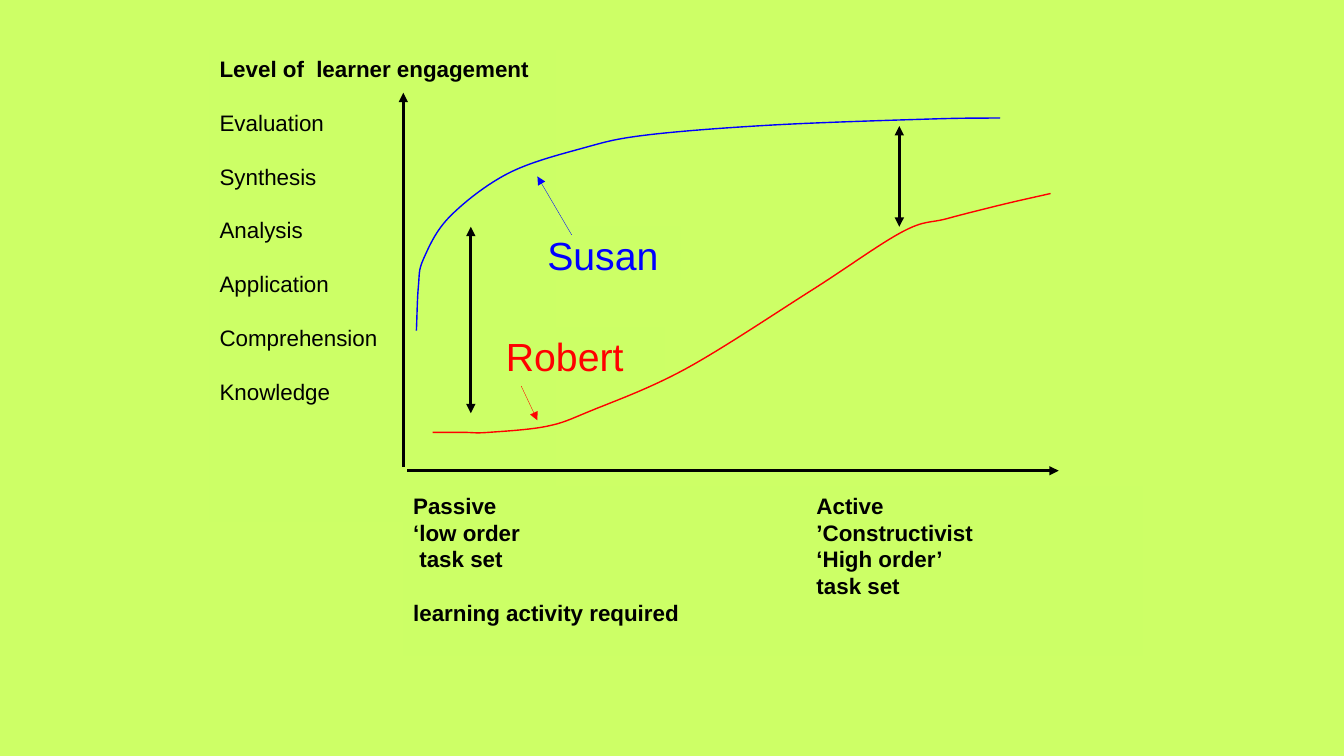
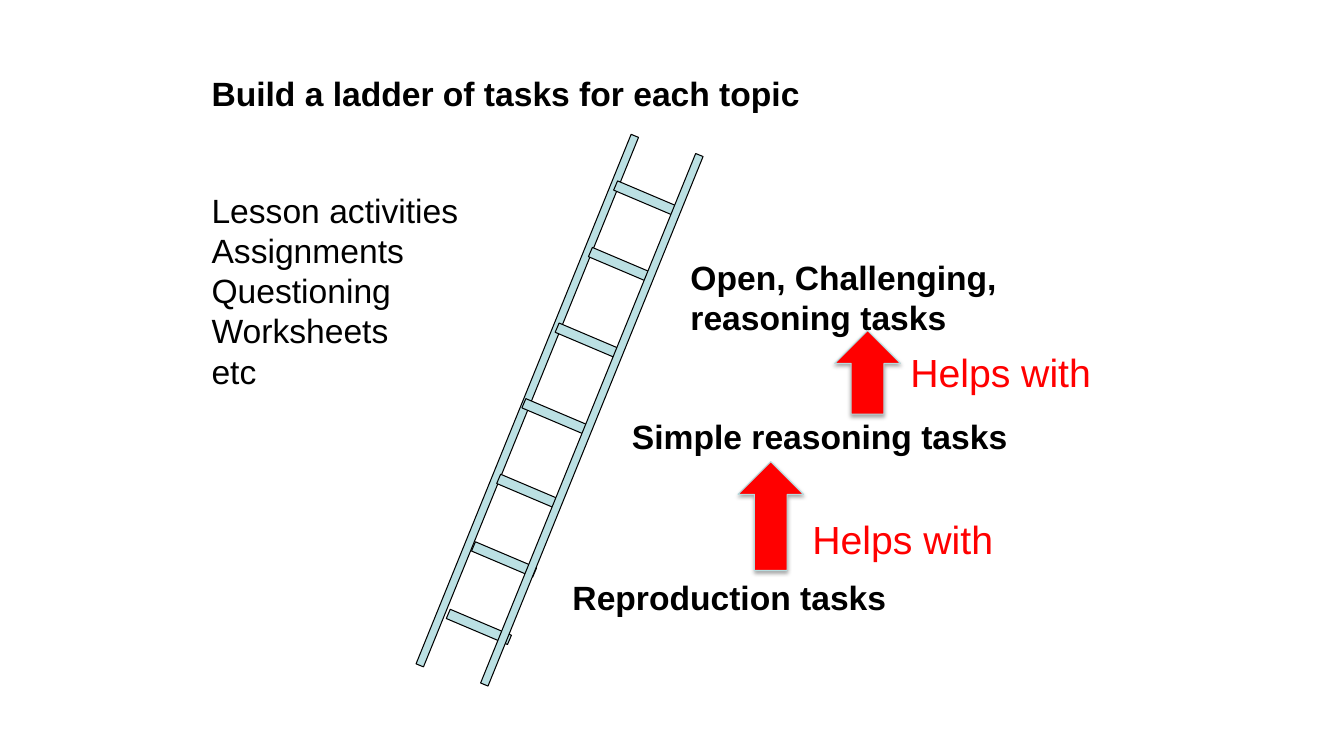
from lxml.etree import SubElement
from pptx import Presentation
from pptx.dml.color import RGBColor
from pptx.enum.shapes import MSO_CONNECTOR, MSO_SHAPE
from pptx.oxml.ns import qn
from pptx.util import Inches, Pt

FONT = "Arial"
BLACK = RGBColor(0x00, 0x00, 0x00)
BLUE = RGBColor(0x00, 0x00, 0xFF)
RED = RGBColor(0xFF, 0x00, 0x00)
LIME = RGBColor(0xCD, 0xFF, 0x66)
LIME_PANEL = RGBColor(0xCC, 0xFF, 0x66)
WHITE = RGBColor(0xFF, 0xFF, 0xFF)
PALE_TEAL = RGBColor(0xBB, 0xE0, 0xE3)
TEAL_EDGE = RGBColor(0xB6, 0xDC, 0xDF)


def add_text(slide, box, lines, size, color=BLACK, bold=False, gap=0, fill=None):
    shape = slide.shapes.add_textbox(*[Inches(value) for value in box])
    if fill is not None:
        shape.fill.solid()
        shape.fill.fore_color.rgb = fill
    text_frame = shape.text_frame
    text_frame.word_wrap = True
    text_frame.text = "\n".join(lines)
    for index, paragraph in enumerate(text_frame.paragraphs):
        paragraph.line_spacing = Pt(size * 1.2)
        paragraph.space_before = Pt(gap if index else 0)
        for run in paragraph.runs:
            run.font.name = FONT
            run.font.size = Pt(size)
            run.font.bold = bold
            run.font.color.rgb = color
    return shape


def add_block(slide, preset, box, fill, edge, rotation=0):
    shape = slide.shapes.add_shape(preset, *[Inches(value) for value in box])
    shape.rotation = rotation
    shape.shadow.inherit = False
    shape.fill.solid()
    shape.fill.fore_color.rgb = fill
    shape.line.color.rgb = edge
    shape.line.width = Pt(0.75)
    return shape


presentation = Presentation()
presentation.slide_width = Inches(13.33)
presentation.slide_height = Inches(7.5)
slides = []
for background in (LIME, WHITE):
    slide = presentation.slides.add_slide(presentation.slide_layouts[6])
    slide.background.fill.solid()
    slide.background.fill.fore_color.rgb = background
    slides.append(slide)
engagement_slide, ladder_slide = slides

levels = ["Level of  learner engagement", "Evaluation", "Synthesis", "Analysis",
          "Application", "Comprehension", "Knowledge"]
level_box = add_text(engagement_slide, (2.08, 0.5, 3.43, 4.67), levels, 16,
                     gap=19.2, fill=LIME_PANEL)
level_box.text_frame.paragraphs[0].runs[0].font.bold = True

activities = ["Passive\tActive", "‘low order\t’Constructivist",
              " task set\t‘High order’", "\ttask set", "learning activity required"]
activity_box = add_text(engagement_slide, (4, 4.83, 7.33, 1.67), activities, 16,
                        bold=True, fill=LIME_PANEL)
for paragraph in activity_box.text_frame.paragraphs:
    tab_list = SubElement(paragraph._p.get_or_add_pPr(), qn("a:tabLst"))
    SubElement(tab_list, qn("a:tab"), pos=str(Inches(4)), algn="l")

add_text(engagement_slide, (5.33, 2.25, 1.42, 0.52), ["Susan"], 28, BLUE, fill=LIME_PANEL)
add_text(engagement_slide, (4.92, 3.25, 1.67, 0.52), ["Robert"], 28, RED, fill=LIME_PANEL)

susan_points = [(4.13, 3.28), (4.15, 2.84), (4.2, 2.57), (4.46, 2.15), (5.04, 1.72),
                (5.78, 1.47), (6.41, 1.34), (7.67, 1.24), (9.25, 1.18), (9.92, 1.17)]
robert_points = [(4.29, 4.29), (4.61, 4.29), (4.84, 4.29), (5.42, 4.23), (5.85, 4.08),
                 (6.8, 3.66), (8.05, 2.88), (8.95, 2.3), (9.39, 2.17), (9.94, 2.03),
                 (10.42, 1.92)]
for points, color in ((susan_points, BLUE), (robert_points, RED)):
    corners = [(Inches(x), Inches(y)) for x, y in points]
    builder = engagement_slide.shapes.build_freeform(*corners[0])
    builder.add_line_segments(corners[1:], close=False)
    curve = builder.convert_to_shape()
    curve.shadow.inherit = False
    curve.fill.background()
    curve.line.color.rgb = color
    curve.line.width = Pt(1)
    local = [(x - curve.left, y - curve.top) for x, y in corners]
    before = tuple(2 * a - b for a, b in zip(local[0], local[1]))
    after = tuple(2 * a - b for a, b in zip(local[-1], local[-2]))
    chain = [before, *local, after]
    segments = list(curve._element.iter(qn("a:lnTo")))
    for segment, p0, p1, p2, p3 in zip(segments, chain, chain[1:], chain[2:], chain[3:]):
        leave = [b + (c - a) / 6 for a, b, c in zip(p0, p1, p2)]
        arrive = [c - (d - b) / 6 for b, c, d in zip(p1, p2, p3)]
        bezier = segment.getparent().makeelement(qn("a:cubicBezTo"))
        for x, y in (leave, arrive, p2):
            SubElement(bezier, qn("a:pt"), x=str(round(x)), y=str(round(y)))
        segment.getparent().replace(segment, bezier)

arrows = [
    ((4, 4.63), (4, 0.92), BLACK, 2.25, ["tailEnd"]),
    ((4.04, 4.67), (10.5, 4.67), BLACK, 2.25, ["tailEnd"]),
    ((4.67, 2.25), (4.67, 4.1), BLACK, 2.25, ["headEnd", "tailEnd"]),
    ((8.92, 1.25), (8.92, 2.25), BLACK, 2.25, ["headEnd", "tailEnd"]),
    ((5.67, 2.33), (5.33, 1.75), BLUE, 0.25, ["tailEnd"]),
    ((5.17, 3.83), (5.33, 4.17), RED, 0.25, ["tailEnd"]),
]
for start, end, color, width, ends in arrows:
    connector = engagement_slide.shapes.add_connector(
        MSO_CONNECTOR.STRAIGHT, *[Inches(value) for value in start + end])
    connector.line.color.rgb = color
    connector.line.width = Pt(width)
    properties = connector._element.spPr
    for name in ends:
        SubElement(properties.find(qn("a:ln")), qn("a:" + name), type="triangle")
    SubElement(properties, qn("a:effectLst"))

add_text(ladder_slide, (2, 0.67, 7.2, 1.31),
         ["Build a ladder of tasks for each topic"], 24, bold=True)

left_rail = (5.19, 1.14, 0.08, 5.67, 22.1)
right_rail = (5.83, 1.33, 0.08, 5.67, 22.1)
rung_corners = [(4.42, 6.17), (4.67, 5.5), (4.92, 4.83), (5.17, 4.08),
                (5.5, 3.33), (5.83, 2.58), (6.08, 1.92)]
rungs = [(left, top, 0.66, 0.1, 23) for left, top in rung_corners]
for *box, rotation in [left_rail, *rungs, right_rail]:
    add_block(ladder_slide, MSO_SHAPE.RECTANGLE, box, PALE_TEAL, BLACK, rotation)

for box, label in [
    ((5.58, 5.67, 4, 0.5), "Reproduction tasks"),
    ((6.17, 4.08, 4.17, 0.5), "Simple reasoning tasks"),
    ((6.75, 2.5, 4, 0.91), "Open, Challenging, reasoning tasks"),
]:
    add_text(ladder_slide, box, [label], 24, bold=True)

add_text(ladder_slide, (2, 1.83, 2.75, 2.12),
         ["Lesson activities", "Assignments", "Questioning", "Worksheets", "etc"], 24)

for arrow_box, label_corner in [
    ((7.32, 4.58, 0.65, 1.08), (7.96, 5.06)),
    ((8.28, 3.28, 0.65, 0.83), (8.93, 3.41)),
]:
    arrow = add_block(ladder_slide, MSO_SHAPE.UP_ARROW, arrow_box, RED, TEAL_EDGE)
    effects = arrow._element.spPr.find(qn("a:effectLst"))
    shadow = SubElement(effects, qn("a:outerShdw"), blurRad=str(Pt(3.1)),
                        dist=str(Pt(1.8)), dir="5400000", rotWithShape="0")
    shadow_color = SubElement(shadow, qn("a:srgbClr"), val=str(BLACK))
    SubElement(shadow_color, qn("a:alpha"), val="35000")
    add_text(ladder_slide, (*label_corner, 2.2, 0.57), ["Helps with"], 28, RED)

presentation.save("out.pptx")
